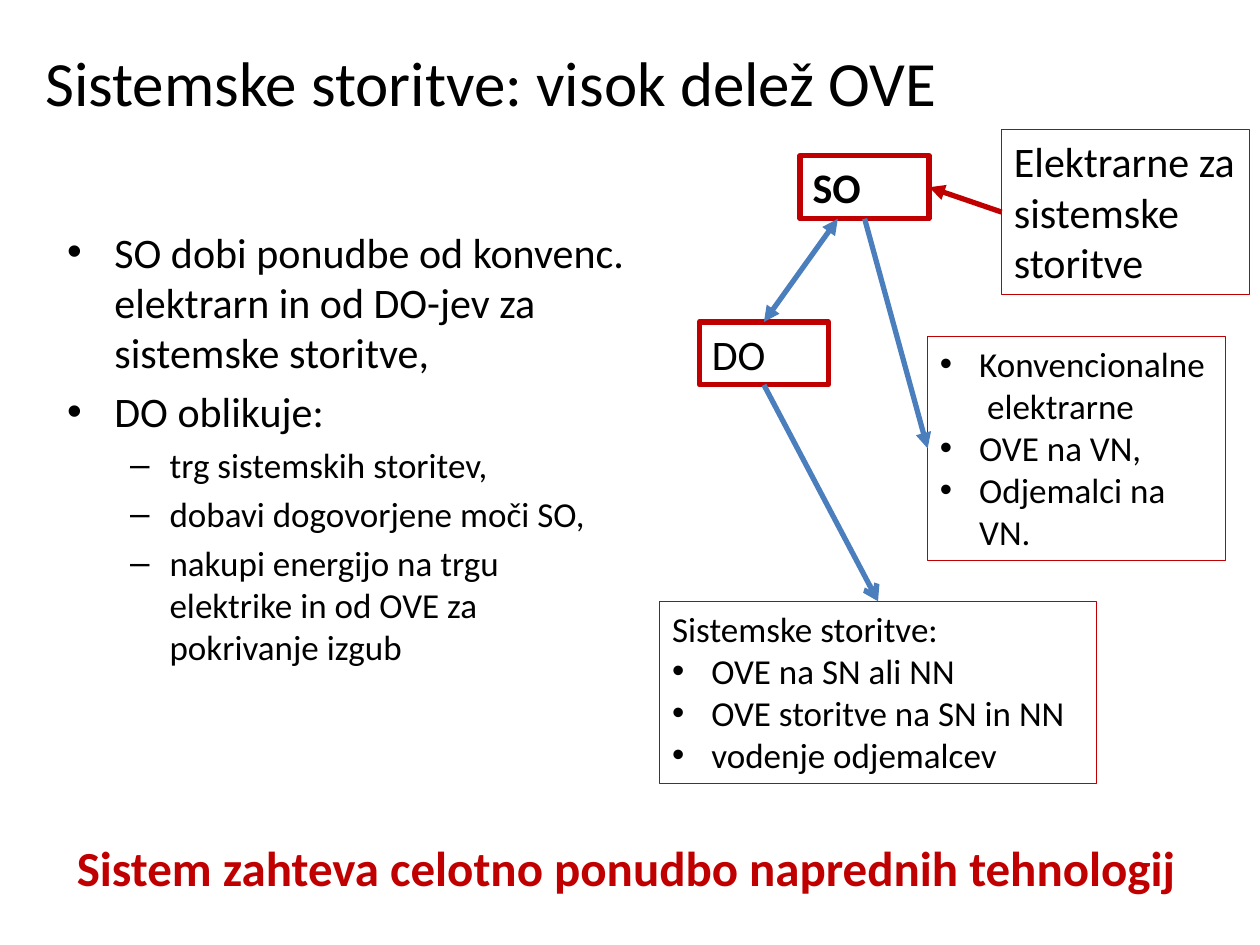
import dataclasses

import lxml.etree
import pptx
import pptx.dml.color
import pptx.enum.shapes
import pptx.enum.text
import pptx.oxml.ns
import pptx.util

Cm = pptx.util.Cm
Pt = pptx.util.Pt
qn = pptx.oxml.ns.qn
RGBColor = pptx.dml.color.RGBColor


@dataclasses.dataclass(frozen=True)
class Theme:
    font: str = "Calibri"
    black: RGBColor = RGBColor(0x00, 0x00, 0x00)
    red: RGBColor = RGBColor(0xC0, 0x00, 0x00)
    blue: RGBColor = RGBColor(0x4B, 0x7E, 0xBC)
    title: Pt = Pt(36)
    banner: Pt = Pt(28)
    large: Pt = Pt(24)
    small: Pt = Pt(20)
    thick: Pt = Pt(3)
    thin: Pt = Pt(0.75)


theme = Theme()


def place(shape, left, top, width, height):
    shape.left, shape.top = Cm(left), Cm(top)
    shape.width, shape.height = Cm(width), Cm(height)


def add_run(paragraph, text, size, color=theme.black, bold=False):
    run = paragraph.add_run()
    run.text = text
    run.font.name = theme.font
    run.font.size = size
    run.font.bold = bold
    run.font.color.rgb = color


presentation = pptx.Presentation()
presentation.slide_width = Cm(25.4)
presentation.slide_height = Cm(19.05)
slide = presentation.slides.add_slide(presentation.slide_layouts[1])

title = slide.shapes.title
place(title, 0.5, 0.76, 18.8, 1.75)
add_run(title.text_frame.paragraphs[0], "Sistemske storitve: visok delež OVE", theme.title)

body = slide.placeholders[1]
place(body, 1.1, 4.43, 11.81, 10.67)
body_items = [
    (0, "SO dobi ponudbe od konvenc. elektrarn in od DO-jev za sistemske storitve,"),
    (0, "DO oblikuje:"),
    (1, "trg sistemskih storitev,"),
    (1, "dobavi dogovorjene moči SO,"),
    (1, "nakupi energijo na trgu elektrike in od OVE za pokrivanje izgub"),
]
for index, (level, text) in enumerate(body_items):
    frame = body.text_frame
    paragraph = frame.add_paragraph() if index else frame.paragraphs[0]
    paragraph.level = level
    if index == 0:
        paragraph.space_before = Pt(0)
    add_run(paragraph, text, theme.small if level else theme.large)

box_specs = {
    "SO": ((16.13, 3.14, 2.6, 1.27), theme.thick, theme.large, True, [(False, "SO")]),
    "DO": ((14.1, 6.49, 2.6, 1.27), theme.thick, theme.large, False, [(False, "DO")]),
    "plants": ((20.19, 2.61, 5, 3.33), theme.thin, theme.large, False,
               [(False, "Elektrarne za sistemske storitve")]),
    "high voltage": ((18.7, 6.78, 6, 4.52), theme.thin, theme.small, False,
                     [(True, "Konvencionalne  elektrarne"),
                      (True, "OVE na VN,"),
                      (True, "Odjemalci na VN.")]),
    "services": ((13.3, 12.12, 8.8, 3.68), theme.thin, theme.small, False,
                 [(False, "Sistemske storitve:"),
                  (True, "OVE na SN ali NN"),
                  (True, "OVE storitve na SN in NN"),
                  (True, "vodenje odjemalcev")]),
}
boxes = {}
for name, (position, line_width, size, bold, items) in box_specs.items():
    box = slide.shapes.add_shape(
        pptx.enum.shapes.MSO_SHAPE.RECTANGLE, *(Cm(value) for value in position))
    box.shadow.inherit = False
    box.fill.background()
    box.line.color.rgb = theme.red
    box.line.width = line_width
    frame = box.text_frame
    frame.word_wrap = True
    frame.vertical_anchor = pptx.enum.text.MSO_ANCHOR.TOP
    for index, (bulleted, text) in enumerate(items):
        paragraph = frame.add_paragraph() if index else frame.paragraphs[0]
        paragraph.alignment = pptx.enum.text.PP_ALIGN.LEFT
        if bulleted:
            properties = paragraph._p.get_or_add_pPr()
            properties.set("marL", str(Cm(0.79)))
            properties.set("indent", str(-Cm(0.79)))
            lxml.etree.SubElement(properties, qn("a:buFont"), typeface="Arial")
            lxml.etree.SubElement(properties, qn("a:buChar"), char="•")
        add_run(paragraph, text, size, bold=bold)
    boxes[name] = box

TOP, LEFT, BOTTOM, RIGHT = range(4)
arrows = [
    (("SO", BOTTOM), ("high voltage", LEFT), theme.blue, {"tailEnd": "triangle"}),
    (None, ("DO", TOP), theme.blue, {"headEnd": "triangle", "tailEnd": "triangle"}),
    (("DO", BOTTOM), ("services", TOP), theme.blue, {"tailEnd": "arrow"}),
    (("plants", LEFT), ("SO", RIGHT), theme.red, {"tailEnd": "triangle"}),
]
for start, end, color, heads in arrows:
    arrow = slide.shapes.add_connector(
        pptx.enum.shapes.MSO_CONNECTOR.STRAIGHT, Cm(16.89), Cm(4.41), Cm(15.4), Cm(6.49))
    if start:
        arrow.begin_connect(boxes[start[0]], start[1])
    arrow.end_connect(boxes[end[0]], end[1])
    arrow.line.color.rgb = color
    arrow.line.width = theme.thick
    line = arrow.line._get_or_add_ln()
    for tag, kind in heads.items():
        lxml.etree.SubElement(line, qn(f"a:{tag}"), type=kind)
    lxml.etree.SubElement(arrow._element.spPr, qn("a:effectLst"))

banner = slide.shapes.add_textbox(Cm(1.3), Cm(16.76), Cm(23.39), Cm(1.45))
banner.text_frame.word_wrap = True
add_run(banner.text_frame.paragraphs[0],
        "Sistem zahteva celotno ponudbo naprednih tehnologij",
        theme.banner, theme.red, True)

presentation.save("out.pptx")
